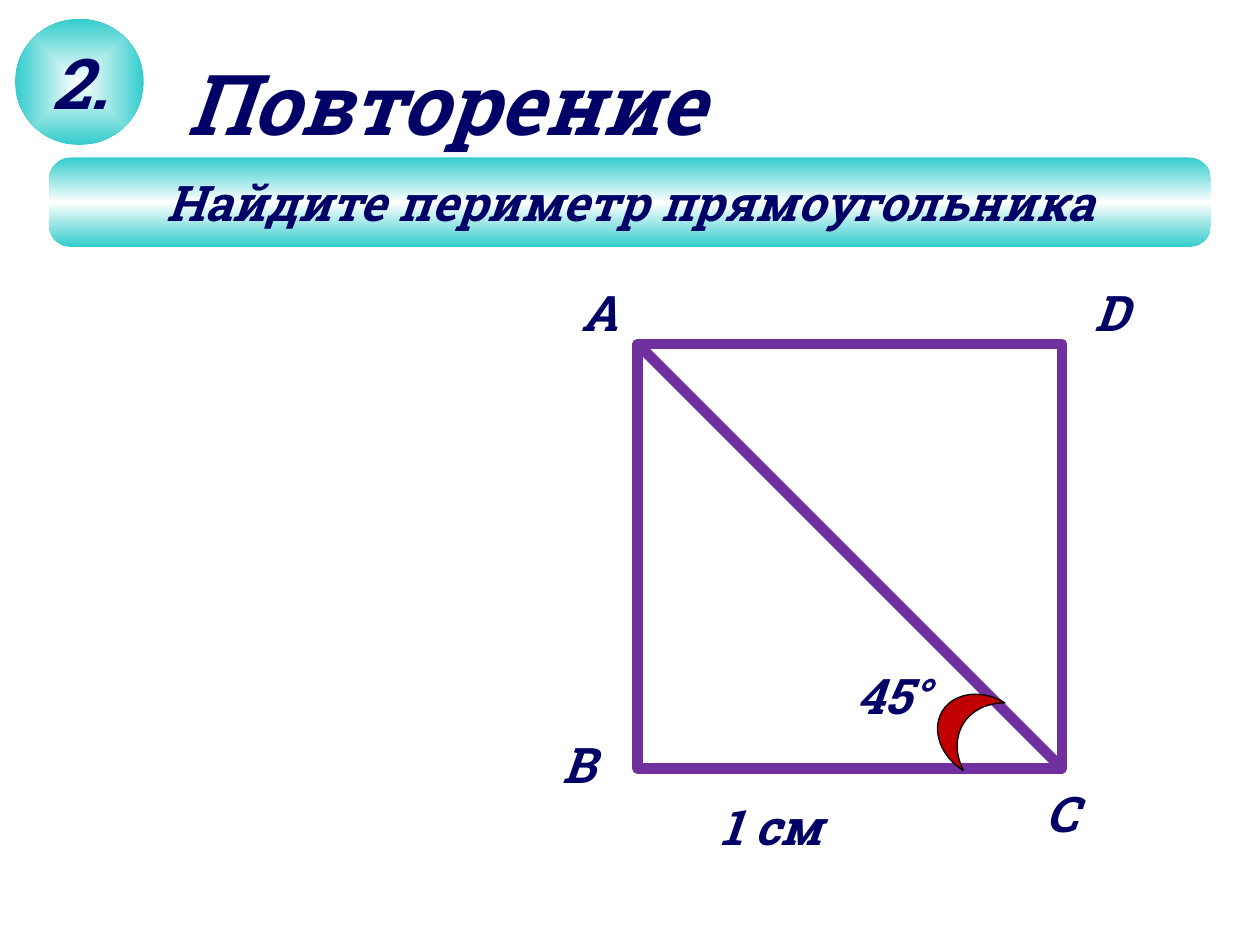
import lxml.etree
import pptx
import pptx.dml.color
import pptx.enum.shapes
import pptx.enum.text
import pptx.oxml
import pptx.oxml.ns
import pptx.util
from dataclasses import dataclass

Inches, Pt = pptx.util.Inches, pptx.util.Pt
RGB = pptx.dml.color.RGBColor.from_string
SHAPE = pptx.enum.shapes.MSO_SHAPE
ALIGN = pptx.enum.text.PP_ALIGN
ANCHOR = pptx.enum.text.MSO_ANCHOR
AUTO = pptx.enum.text.MSO_AUTO_SIZE
qn = pptx.oxml.ns.qn


@dataclass(frozen=True)
class Theme:
    font: str = "Roboto Slab"
    ink: str = "000066"
    teal: str = "33CCCC"
    white: str = "FFFFFF"
    square: str = "7030A0"
    angle: str = "C00000"
    angle_line: str = "000000"
    title_line: str = "5E457C"
    body: int = 28
    number: int = 40
    title: int = 48


THEME = Theme()

TITLE = ("Повторение", (1.38, 0.36, 4.72, 0.91))
TASK = ("Найдите периметр прямоугольника", (0.39, 1.25, 9.22, 0.71))
NUMBER = ("2.", (0.12, 0.15, 1.02, 1))
SQUARE = (5.06, 2.73, 3.37)  # left, top, side
ANGLE_MARK = (7.45, 5.43, 0.39, 0.63)
MEASURES = [
    ("45°", (6.7, 5.23, 1.1, 0.57)),
    ("1 см", (5.62, 6.27, 1.57, 0.57)),
]
VERTICES = [
    ("D", (8.59, 2.19, 0.51, 0.57)),
    ("С", (8.2, 6.17, 0.49, 0.57)),
    ("В", (4.37, 5.78, 0.5, 0.57)),
    ("А", (4.52, 2.19, 0.5, 0.57)),
]

LINEAR = '<a:lin ang="5400000" scaled="1"/>'
RADIAL = ('<a:path path="shape"><a:fillToRect l="50000" t="50000" '
          'r="50000" b="50000"/></a:path>')


def box(at):
    return [Inches(v) for v in at]


def write(sp, text, size, wrap=False):
    tf = sp.text_frame
    tf.word_wrap = wrap
    p = tf.paragraphs[0]
    r = p.add_run()
    r.text = text
    p.font.name = THEME.font
    p.font.size = Pt(size)
    p.font.bold = p.font.italic = True
    p.font.color.rgb = RGB(THEME.ink)
    return r


def add_label(slide, text, at, size=THEME.body, wrap=False):
    sp = slide.shapes.add_textbox(*box(at))
    r = write(sp, text, size, wrap)
    sp.text_frame.auto_size = AUTO.SHAPE_TO_FIT_TEXT
    return r


def fill_gradient(sp, stops, direction):
    """Fill with (percent, colour) stops; direction is the XML of its course."""
    marks = "".join(f'<a:gs pos="{pos * 1000}"><a:srgbClr val="{color}"/></a:gs>'
                    for pos, color in stops)
    new = pptx.oxml.parse_xml(
        f'<a:gradFill {pptx.oxml.ns.nsdecls("a")} rotWithShape="1">'
        f'<a:gsLst>{marks}</a:gsLst>{direction}</a:gradFill>')
    sp.fill.gradient()
    spPr = sp.element.spPr
    spPr.replace(spPr.find(qn("a:gradFill")), new)


def add_badge(slide, kind, text, at, size, stops, direction):
    sp = slide.shapes.add_shape(kind, *box(at))
    sp.shadow.inherit = False
    sp.line.fill.background()
    fill_gradient(sp, stops, direction)
    write(sp, text, size)
    sp.text_frame.vertical_anchor = ANCHOR.MIDDLE
    sp.text_frame.paragraphs[0].alignment = ALIGN.CENTER
    return sp


def add_square(slide):
    left, top, side = SQUARE
    group = slide.shapes.add_group_shape()
    square = group.shapes.add_shape(SHAPE.RECTANGLE, *box((left, top, side, side)))
    square.shadow.inherit = False
    square.fill.background()
    diagonal = group.shapes.add_connector(
        pptx.enum.shapes.MSO_CONNECTOR.STRAIGHT,
        *box((left, top, left + side, top + side)))
    lxml.etree.SubElement(diagonal.element.spPr, qn("a:effectLst"))
    for sp in (square, diagonal):
        sp.line.color.rgb = RGB(THEME.square)
        sp.line.width = Pt(6)


def add_angle_mark(slide):
    sp = slide.shapes.add_shape(SHAPE.MOON, *box(ANGLE_MARK))
    sp.shadow.inherit = False
    sp.rotation = 31.6
    sp.fill.solid()
    sp.fill.fore_color.rgb = RGB(THEME.angle)
    sp.line.color.rgb = RGB(THEME.angle_line)
    sp.line.width = Pt(0.75)


def add_title(slide):
    text, at = TITLE
    r = add_label(slide, text, at, THEME.title, wrap=True)
    outline = pptx.oxml.parse_xml(
        f'<a:ln {pptx.oxml.ns.nsdecls("a")} w="{Pt(0.71)}"><a:solidFill>'
        f'<a:srgbClr val="{THEME.title_line}"/></a:solidFill></a:ln>')
    r.font.fill.solid()
    r.font.color.rgb = RGB(THEME.ink)
    r._r.get_or_add_rPr().insert(0, outline)


def main():
    prs = pptx.Presentation()
    prs.slide_width, prs.slide_height = Inches(10), Inches(7.5)
    slide = prs.slides.add_slide(prs.slide_layouts[6])

    add_square(slide)
    for text, at in MEASURES:
        add_label(slide, text, at, wrap=True)
    add_angle_mark(slide)
    banner = add_badge(slide, SHAPE.ROUNDED_RECTANGLE, *TASK, THEME.body,
                       [(0, THEME.teal), (50, THEME.white), (100, THEME.teal)], LINEAR)
    banner.adjustments[0] = 0.25
    for text, at in VERTICES:
        add_label(slide, text, at)
    add_badge(slide, SHAPE.OVAL, *NUMBER, THEME.number,
              [(0, THEME.white), (100, THEME.teal)], RADIAL)
    add_title(slide)
    prs.save("out.pptx")


if __name__ == "__main__":
    main()
